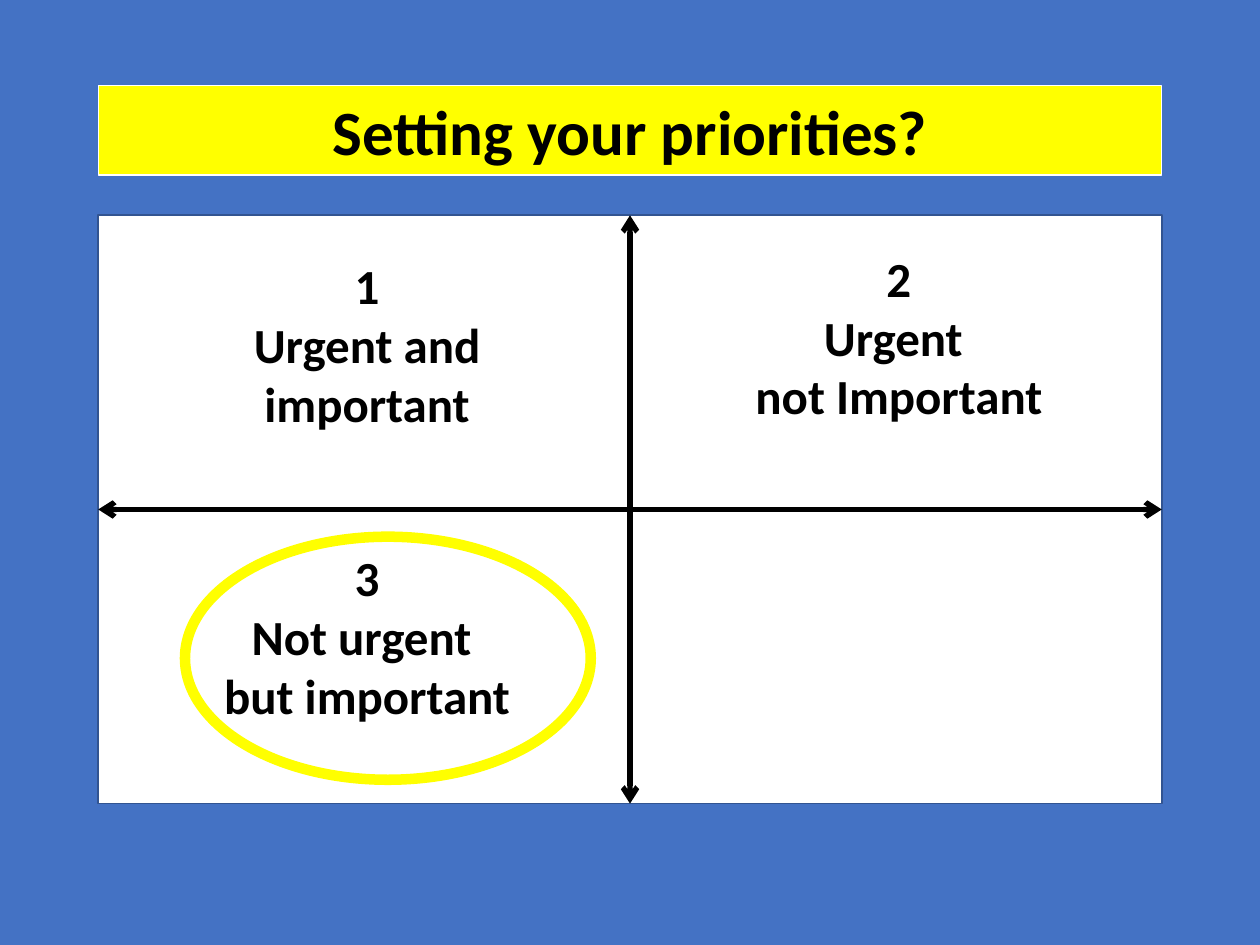
from lxml import etree
from pptx import Presentation
from pptx import util as u
from pptx.dml.color import RGBColor
from pptx.enum import shapes, text
from pptx.oxml.ns import qn

COLORS = {"backdrop": "4472C4", "panel": "FFFFFF", "edge": "325491",
          "ink": "000000", "accent": "FFFF00"}
FONT = "Calibri"
HEADING = "Setting your priorities?"
QUADRANTS = [
    (3.73, 4.93, ["1", "Urgent and important"]),
    (14.45, 4.78, ["2", "Urgent ", "not Important"]),
    (3.73, 10.82, ["3", "Not urgent ", "but important"]),
]
SLIDE_W, SLIDE_H = 25.4, 19.05
MARGIN = 1.98
PANEL_W = SLIDE_W - 2 * MARGIN
PANEL_TOP, PANEL_H = 4.34, 11.86
QUADRANT_W, QUADRANT_H = 7.34, 4.01


def rgb(name):
    return RGBColor.from_string(COLORS[name])


def cm(*lengths):
    return [u.Cm(length) for length in lengths]


def add_figure(slide, preset, box, fill, edge, width):
    figure = slide.shapes.add_shape(preset, *cm(*box))
    figure.shadow.inherit = False
    if fill:
        figure.fill.solid()
        figure.fill.fore_color.rgb = rgb(fill)
    else:
        figure.fill.background()
    figure.line.color.rgb = rgb(edge)
    figure.line.width = u.Pt(width)
    return figure


def write(frame, lines, size):
    frame.word_wrap = True
    frame.vertical_anchor = text.MSO_ANCHOR.MIDDLE
    for index, line in enumerate(lines):
        paragraph = frame.add_paragraph() if index else frame.paragraphs[0]
        paragraph.alignment = text.PP_ALIGN.CENTER
        run = paragraph.add_run()
        run.text = line
        run.font.name = FONT
        run.font.size = u.Pt(size)
        run.font.bold = True
        run.font.color.rgb = rgb("ink")


def add_axis(slide, ends):
    axis = slide.shapes.add_connector(shapes.MSO_CONNECTOR.STRAIGHT, *cm(*ends))
    axis.line.color.rgb = rgb("ink")
    axis.line.width = u.Pt(3)
    outline = axis.line._get_or_add_ln()
    for end in ("a:headEnd", "a:tailEnd"):
        etree.SubElement(outline, qn(end), type="arrow")
    etree.SubElement(axis._element.spPr, qn("a:effectLst"))


def main():
    deck = Presentation()
    deck.slide_width, deck.slide_height = cm(SLIDE_W, SLIDE_H)
    slide = deck.slides.add_slide(deck.slide_layouts[6])
    slide.background.fill.solid()
    slide.background.fill.fore_color.rgb = rgb("backdrop")

    rect, oval = shapes.MSO_SHAPE.RECTANGLE, shapes.MSO_SHAPE.OVAL
    add_figure(slide, rect, (MARGIN, PANEL_TOP, PANEL_W, PANEL_H),
               "panel", "edge", 1)
    middle_x, middle_y = SLIDE_W / 2, PANEL_TOP + PANEL_H / 2
    add_axis(slide, (middle_x, PANEL_TOP, middle_x, PANEL_TOP + PANEL_H))
    add_axis(slide, (MARGIN, middle_y, MARGIN + PANEL_W, middle_y))

    for left, top, lines in QUADRANTS:
        quadrant = slide.shapes.add_textbox(
            *cm(left, top, QUADRANT_W, QUADRANT_H))
        write(quadrant.text_frame, lines, 28)

    heading = add_figure(slide, rect, (MARGIN, 1.73, PANEL_W, 1.8),
                         "accent", "panel", 0.75)
    write(heading.text_frame, [HEADING], 36)
    heading.text_frame.auto_size = text.MSO_AUTO_SIZE.SHAPE_TO_FIT_TEXT

    ring_left, ring_top, _ = QUADRANTS[2]
    add_figure(slide, oval, (ring_left, ring_top, 8.18, 4.9),
               None, "accent", 6)
    deck.save("out.pptx")


if __name__ == "__main__":
    main()
